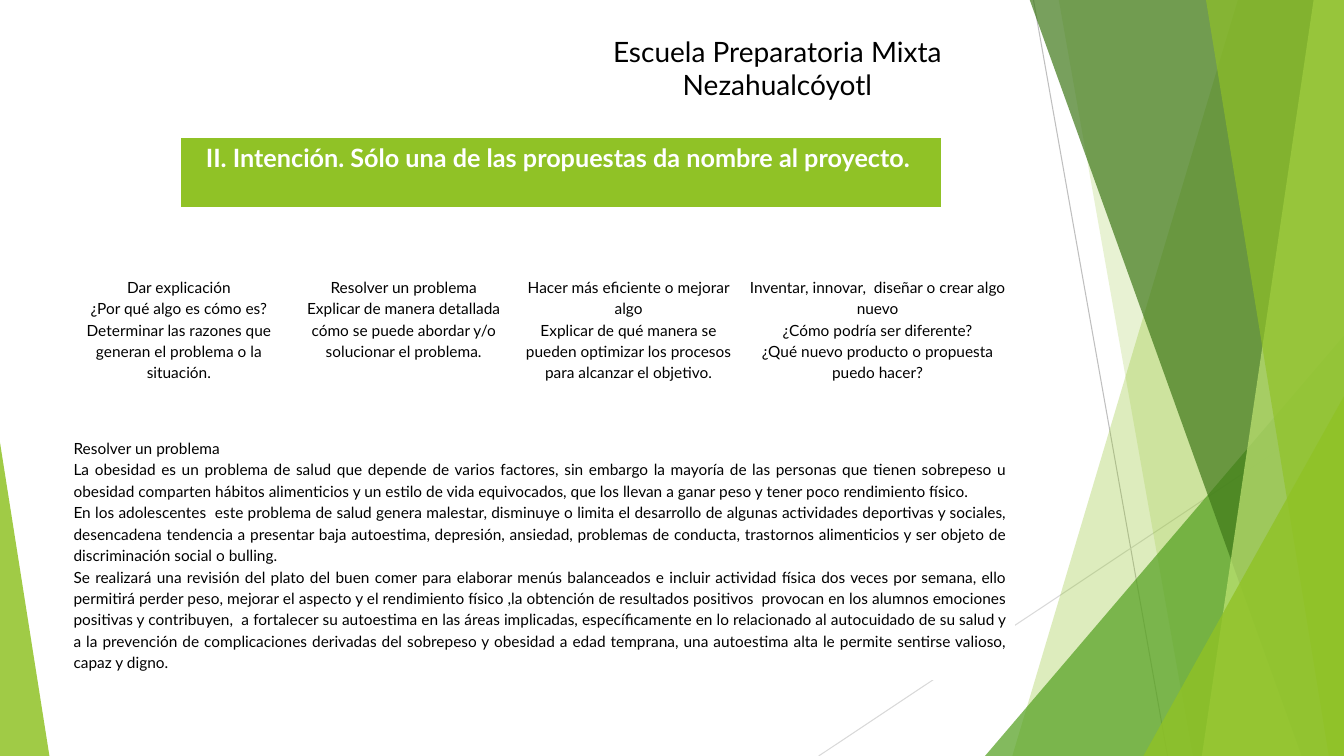
"""Build the project intention slide of a school presentation."""
from lxml.etree import SubElement
from pptx import Presentation
from pptx.dml.color import RGBColor
from pptx.enum.shapes import MSO_CONNECTOR, MSO_SHAPE
from pptx.enum.text import MSO_ANCHOR, PP_ALIGN
from pptx.oxml.ns import qn
from pptx.util import Pt

PX = 9144
WIDTH, HEIGHT = 1333, 750
FONT = "Lato"
COLORS = {
    "white": "FFFFFF", "black": "000000", "lime": "90C226", "green": "54A021",
    "forest": "3F7819", "pale": "C0E474", "gray": "BFBFBF", "silver": "D9D9D9",
}

SCHOOL = "Escuela Preparatoria Mixta Nezahualcóyotl"
SCHOOL_BOX = (505, 29, 532, 44)
BANNER = "II. Intención. Sólo una de las propuestas da nombre al proyecto. "
BANNER_BOX = (178, 136, 757, 71)

INTENTIONS = [
    ["Dar explicación", "¿Por qué algo es cómo es?",
     "Determinar las razones que generan el problema o la situación."],
    ["Resolver un problema",
     "Explicar de manera detallada cómo se puede abordar y/o solucionar el problema."],
    ["Hacer más eficiente o mejorar algo",
     "Explicar de qué manera se pueden optimizar los procesos para alcanzar el objetivo."],
    ["Inventar, innovar,  diseñar o crear algo nuevo", "¿Cómo podría ser diferente?",
     "¿Qué nuevo producto o propuesta puedo hacer?"],
]
PROPOSAL = [
    "Resolver un problema",
    "La obesidad es un problema de salud que depende de varios factores, sin embargo la mayoría "
    "de las personas que tienen sobrepeso u obesidad comparten hábitos alimenticios y un estilo "
    "de vida equivocados, que los llevan a ganar peso y tener poco rendimiento físico.",
    "En los adolescentes  este problema de salud genera malestar, disminuye o limita el "
    "desarrollo de algunas actividades deportivas y sociales, desencadena tendencia a presentar "
    "baja autoestima, depresión, ansiedad, problemas de conducta, trastornos alimenticios y ser "
    "objeto de discriminación social o bulling.",
    "Se realizará una revisión del plato del buen comer para elaborar menús balanceados e "
    "incluir actividad física dos veces por semana, ello permitirá perder peso, mejorar el "
    "aspecto y el rendimiento físico ,la obtención de resultados positivos  provocan en los "
    "alumnos emociones positivas y contribuyen,  a fortalecer su autoestima en las áreas "
    "implicadas, específicamente en lo relacionado al autocuidado de su salud y a la prevención "
    "de complicaciones derivadas del sobrepeso y obesidad a edad temprana, una autoestima alta "
    "le permite sentirse valioso, capaz y digno.",
]
TABLE_ORIGIN = (66, 266)
COLUMNS = [223, 223, 223, 271]
ROWS = [139, 266]
CELL_MARGIN = 7
PROPOSAL_TOP = 28

LINES = [((1025, 0), (1158, 750), "gray"), ((1333, 403), (812, 750), "silver")]
BANDS_BEHIND = [(1228, 1004, "lime", 30), (1050, 1183, "lime", 20)]
BANDS_FRONT = [
    (1021, 1291, "forest", 70), (1303, 1192, "pale", 70), (1196, 1318, "lime", 65),
]
TRIANGLE_MIDDLE = ((977, 333, 356, 417), 1, "green", 72)
TRIANGLES_FRONT = [
    ((1134, 393, 199, 357), 1, "lime", 80), ((0, 439, 49, 311), 0, "lime", 85),
]


def px(values):
    return [value * PX for value in values]


def color(name):
    return RGBColor.from_string(COLORS[name])


def paint(shape, name, opacity=100):
    shape.shadow.inherit = False
    shape.fill.solid()
    shape.fill.fore_color.rgb = color(name)
    shape.line.fill.background()
    if opacity < 100:
        solid = shape._element.spPr.find(qn("a:solidFill"))
        SubElement(solid[0], qn("a:alpha"), val=str(opacity * 1000))


def add_line(slide, start, end, name):
    line = slide.shapes.add_connector(MSO_CONNECTOR.STRAIGHT, *px(start + end))
    line.line.color.rgb = color(name)
    line.line.width = Pt(0.75)
    SubElement(line._element.spPr, qn("a:effectLst"))


def add_band(slide, top_x, bottom_x, name, opacity):
    builder = slide.shapes.build_freeform(top_x, -1, scale=PX)
    builder.add_line_segments([(WIDTH, -1), (WIDTH, HEIGHT), (bottom_x, HEIGHT)], close=True)
    paint(builder.convert_to_shape(), name, opacity)


def add_triangle(slide, box, apex, name, opacity):
    triangle = slide.shapes.add_shape(MSO_SHAPE.ISOSCELES_TRIANGLE, *px(box))
    triangle.adjustments[0] = apex
    paint(triangle, name, opacity)


def write(frame, texts, size, name="black", align=PP_ALIGN.CENTER, bold=False, spacing=None):
    frame.word_wrap = True
    for index, text in enumerate(texts):
        paragraph = frame.add_paragraph() if index else frame.paragraphs[0]
        paragraph.alignment = align
        paragraph.line_spacing = spacing
        run = paragraph.add_run()
        run.text = text
        run.font.name = FONT
        run.font.size = Pt(size)
        run.font.bold = bold
        run.font.color.rgb = color(name)


def fill_cell(cell, texts, align, top):
    cell.fill.solid()
    cell.fill.fore_color.rgb = color("white")
    cell.margin_left = cell.margin_right = cell.margin_bottom = CELL_MARGIN * PX
    cell.margin_top = top * PX
    write(cell.text_frame, texts, 11, align=align, spacing=1.15)


def add_intentions_table(slide):
    size = (sum(COLUMNS), sum(ROWS))
    table = slide.shapes.add_table(len(ROWS), len(COLUMNS), *px(TABLE_ORIGIN + size)).table
    table.first_row = table.horz_banding = False
    for column, width in zip(table.columns, COLUMNS):
        column.width = width * PX
    for row, height in zip(table.rows, ROWS):
        row.height = height * PX
    for index, texts in enumerate(INTENTIONS):
        fill_cell(table.cell(0, index), texts, PP_ALIGN.CENTER, CELL_MARGIN)
    proposal = table.cell(1, 0)
    proposal.merge(table.cell(1, len(COLUMNS) - 1))
    fill_cell(proposal, PROPOSAL, PP_ALIGN.JUSTIFY, PROPOSAL_TOP)


def main():
    presentation = Presentation()
    presentation.slide_width, presentation.slide_height = px((WIDTH, HEIGHT))
    slide = presentation.slides.add_slide(presentation.slide_layouts[6])

    for line in LINES:
        add_line(slide, *line)
    for band in BANDS_BEHIND:
        add_band(slide, *band)
    add_triangle(slide, *TRIANGLE_MIDDLE)
    for band in BANDS_FRONT:
        add_band(slide, *band)
    for triangle in TRIANGLES_FRONT:
        add_triangle(slide, *triangle)

    banner = slide.shapes.add_shape(MSO_SHAPE.RECTANGLE, *px(BANNER_BOX))
    paint(banner, "lime")
    banner.line.color.rgb = color("white")
    banner.line.width = Pt(2)
    banner.text_frame.vertical_anchor = MSO_ANCHOR.TOP
    write(banner.text_frame, [BANNER], 18, "white", bold=True)

    add_intentions_table(slide)
    school = slide.shapes.add_textbox(*px(SCHOOL_BOX))
    write(school.text_frame, [SCHOOL], 20)
    presentation.save("out.pptx")


if __name__ == "__main__":
    main()
